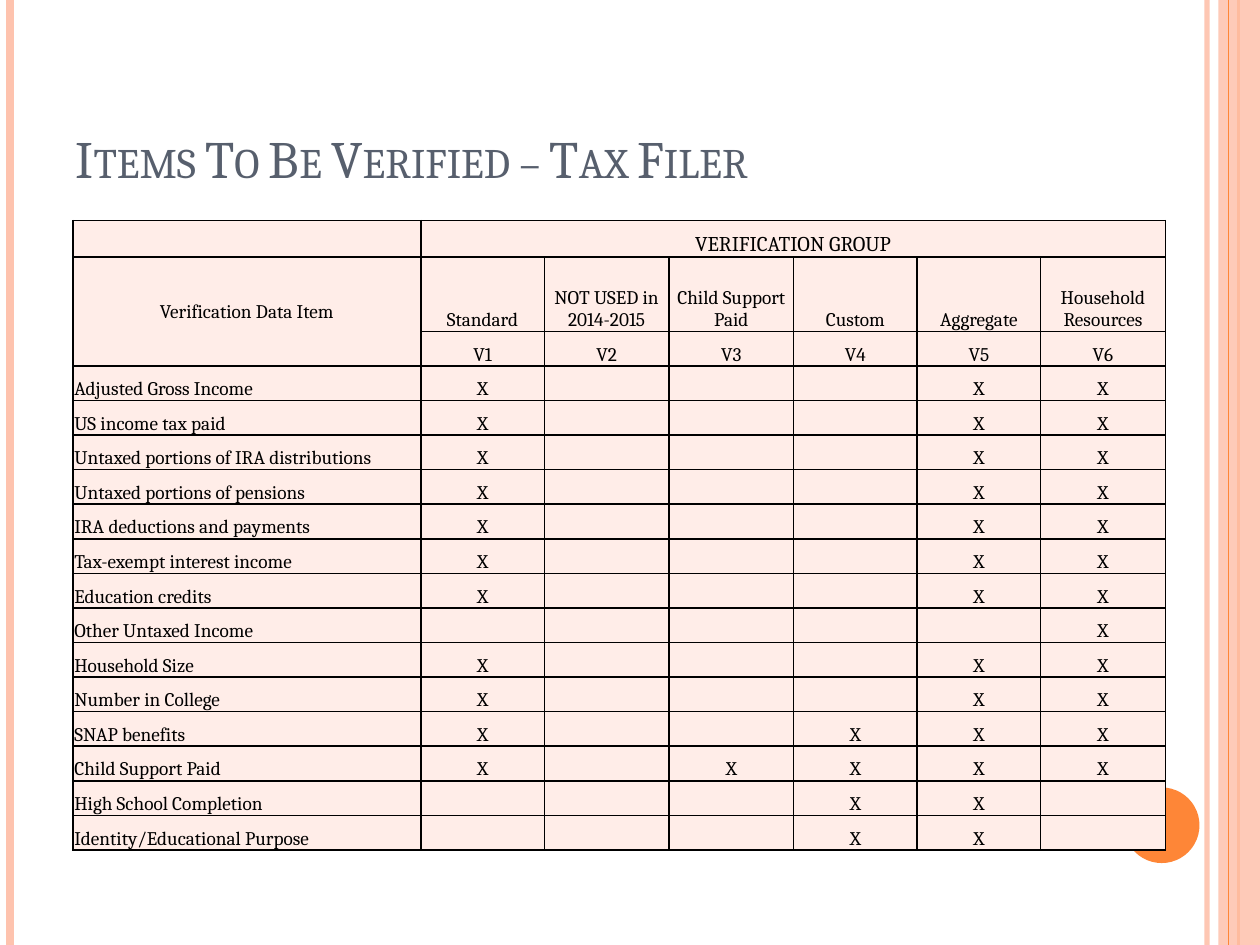
from pptx import Presentation
from pptx.dml.color import RGBColor
from pptx.enum.shapes import MSO_CONNECTOR as Connector, MSO_SHAPE as Shape
from pptx.enum.text import MSO_ANCHOR as Anchor, PP_ALIGN as Align
from pptx.oxml.ns import qn
from pptx.util import Inches, Pt
from lxml.etree import SubElement

COLORS = {
    "peach": "FEC3AE",
    "orange": "FE8637",
    "slate": "575F6D",
    "blush": "FFEDE8",
    "black": "000000",
}
TABLE_HEIGHT = 5
GROUP_ROW, NAME_ROW = 0.29, 0.59
COLUMN_WIDTHS = [2.76, 0.98, 0.99, 0.99, 0.98, 0.98, 0.99]
GROUPS = ["Standard", "NOT USED in 2014-2015", "Child Support Paid",
          "Custom", "Aggregate", "Household Resources"]
ITEMS = {
    "Adjusted Gross Income": "156",
    "US income tax paid": "156",
    "Untaxed portions of IRA distributions": "156",
    "Untaxed portions of pensions": "156",
    "IRA deductions and payments": "156",
    "Tax-exempt interest income": "156",
    "Education credits": "156",
    "Other Untaxed Income": "6",
    "Household Size": "156",
    "Number in College": "156",
    "SNAP benefits": "1456",
    "Child Support Paid": "13456",
    "High School Completion": "45",
    "Identity/Educational Purpose": "45",
}


class SlideBuilder:
    font = "Cambria"

    def __init__(self, slide):
        self.slide = slide

    def color(self, name):
        return RGBColor.from_string(COLORS[name])

    def set_alpha(self, element, percent):
        color = next(element.iter(qn("a:srgbClr")))
        SubElement(color, qn("a:alpha"), val=str(percent * 1000))

    def style_run(self, run, size, color):
        run.font.name = self.font
        run.font.size = Pt(size)
        run.font.color.rgb = self.color(color)

    def rule(self, x, color, width, alpha=100):
        line = self.slide.shapes.add_connector(
            Connector.STRAIGHT, Inches(x), 0, Inches(x), Inches(7.5))
        line.line.color.rgb = self.color(color)
        line.line.width = Pt(width)
        properties = line.element.spPr
        SubElement(properties, qn("a:effectLst"))
        if alpha < 100:
            self.set_alpha(properties, alpha)

    def shape(self, kind, frame, color, alpha=100):
        shape = self.slide.shapes.add_shape(kind, *map(Inches, frame))
        shape.shadow.inherit = False
        shape.fill.solid()
        shape.fill.fore_color.rgb = self.color(color)
        shape.line.fill.background()
        if alpha < 100:
            self.set_alpha(shape.element.spPr, alpha)

    def title(self, text, frame):
        title = self.slide.shapes.title
        title.left, title.top, title.width, title.height = map(Inches, frame)
        title.text_frame.text = text
        title.text_frame.vertical_anchor = Anchor.BOTTOM
        para = title.text_frame.paragraphs[0]
        para.alignment = Align.LEFT
        run = para.runs[0]
        self.style_run(run, 30, "slate")
        run.font._element.set("cap", "small")

    def border(self, cell):
        properties = cell._tc.get_or_add_tcPr()
        for side in ("lnL", "lnR", "lnT", "lnB"):
            line = SubElement(properties, qn(f"a:{side}"), w=str(Pt(1)))
            fill = SubElement(line, qn("a:solidFill"))
            SubElement(fill, qn("a:srgbClr"), val=COLORS["black"])

    def cell(self, cell, text, size, align, anchor):
        self.border(cell)
        cell.fill.solid()
        cell.fill.fore_color.rgb = self.color("blush")
        cell.margin_left = cell.margin_right = cell.margin_top = Inches(0.01)
        cell.margin_bottom = 0
        cell.vertical_anchor = anchor
        para = cell.text_frame.paragraphs[0]
        para.text = text
        para.alignment = align
        for run in para.runs:
            self.style_run(run, size, "black")
        if not text:
            SubElement(para._p, qn("a:endParaRPr"), sz=str(size * 100))

    def table(self, rows, frame, widths, heights):
        table = self.slide.shapes.add_table(
            len(rows), len(widths), *map(Inches, frame)).table
        table.first_row = table.horz_banding = False
        for column, width in zip(table.columns, widths):
            column.width = Inches(width)
        for row, height in zip(table.rows, heights):
            row.height = Inches(height)
        for r, texts in enumerate(rows):
            for c, text in enumerate(texts):
                item = c == 0 and r > 2
                label = c == 0 and r in (1, 2)
                self.cell(table.cell(r, c), text, 12 if r == 0 else 11,
                          Align.LEFT if item else Align.CENTER,
                          Anchor.MIDDLE if label else Anchor.BOTTOM)
        table.cell(0, 1).merge(table.cell(0, len(widths) - 1))
        table.cell(1, 0).merge(table.cell(2, 0))


def main():
    deck = Presentation()
    deck.slide_width, deck.slide_height = Inches(10), Inches(7.5)
    page = SlideBuilder(deck.slides.add_slide(deck.slide_layouts[5]))

    page.rule(9.58, "peach", 3, 93)
    page.rule(0.08, "peach", 4.5)
    page.rule(9.83, "orange", 1.5)
    page.shape(Shape.RECTANGLE, (9.67, 0, 0.33, 7.5), "peach", 87)
    page.rule(9.75, "orange", 0.75)
    page.shape(Shape.OVAL, (8.92, 6.25, 0.6, 0.6), "orange")
    page.title("Items To Be Verified – Tax Filer", (0.5, 0.3, 8.17, 1.25))

    numbers = range(1, len(GROUPS) + 1)
    rows = [
        ["", "VERIFICATION GROUP"] + [""] * (len(GROUPS) - 1),
        ["Verification Data Item"] + GROUPS,
        [""] + [f"V{number}" for number in numbers],
    ]
    for item, marks in ITEMS.items():
        rows.append([item] + ["X" if str(n) in marks else "" for n in numbers])
    small_rows = len(rows) - 2
    small_height = (TABLE_HEIGHT - GROUP_ROW - NAME_ROW) / small_rows
    heights = [GROUP_ROW, NAME_ROW] + [small_height] * small_rows
    page.table(rows, (0.58, 1.75, 8.67, TABLE_HEIGHT), COLUMN_WIDTHS, heights)

    deck.save("out.pptx")


if __name__ == "__main__":
    main()
